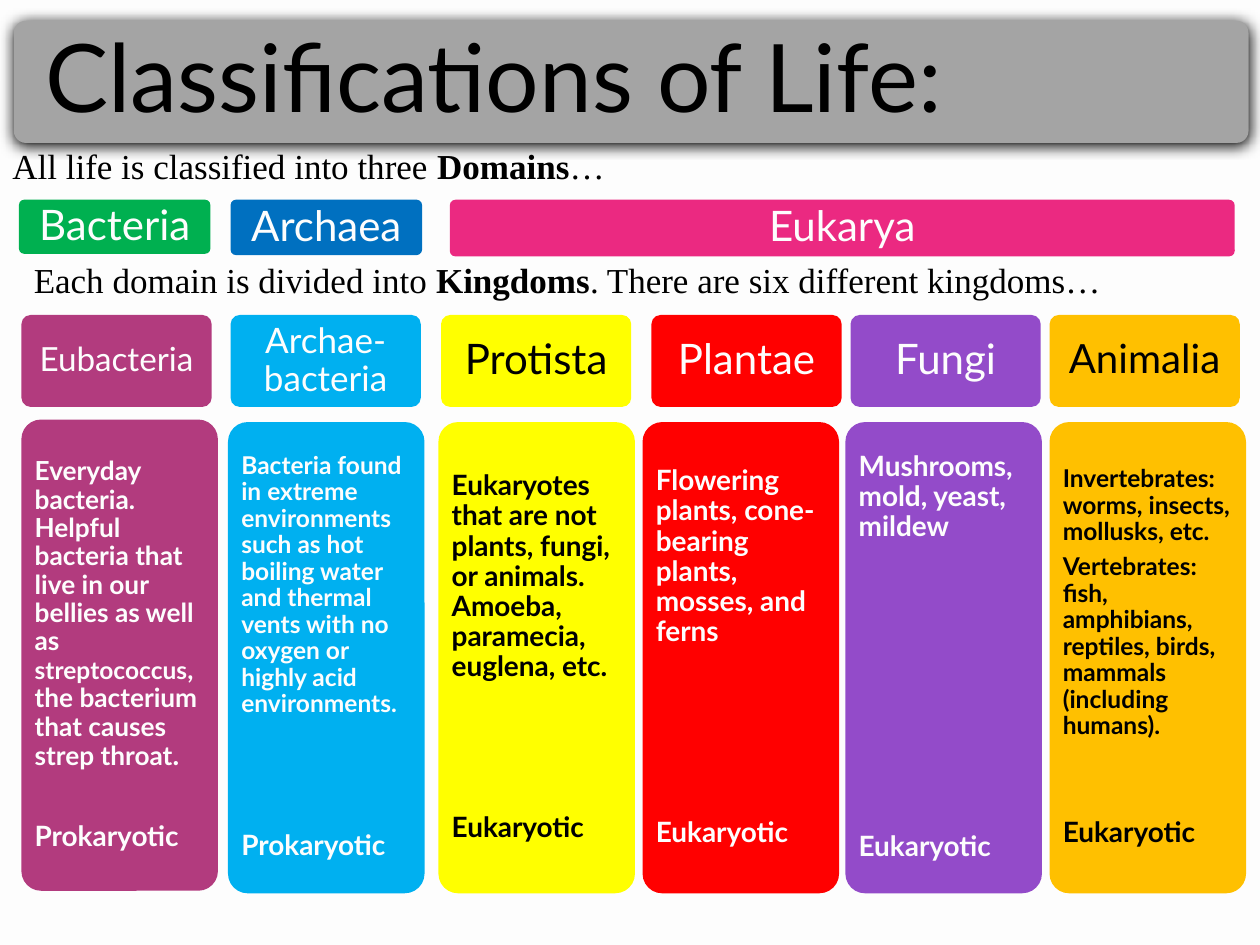
from collections import namedtuple

from lxml import etree
from pptx import Presentation
from pptx.dml.color import RGBColor
from pptx.enum.shapes import MSO_SHAPE
from pptx.enum.text import MSO_ANCHOR, MSO_AUTO_SIZE, PP_ALIGN
from pptx.oxml.ns import qn
from pptx.util import Inches, Pt

ROUNDED = MSO_SHAPE.ROUNDED_RECTANGLE
MIDDLE = MSO_ANCHOR.MIDDLE
NO_FIT = MSO_AUTO_SIZE.NONE
LEFT, CENTER = PP_ALIGN.LEFT, PP_ALIGN.CENTER

# Grid: 100 columns by 75 rows of square cells
COLUMNS, ROWS = 100, 75
CELL = Inches(0.1)
CORNER = 0.1  # corner radius as a share of the shorter side
LABEL_FONT, SENTENCE_FONT = "Lato", "Times New Roman"

COLORS = {
    "background": "FDFDFD", "banner": "A4A4A4", "light": "FDFDFD", "dark": "000000",
    "green": "00B050", "blue": "0070C0", "pink": "EB2981", "plum": "B23B7E",
    "sky": "00B0F0", "yellow": "FFFF00", "red": "FF0000", "purple": "934BC9",
    "amber": "FFC000",
}

Box = namedtuple("Box", "left top width height")
Domain = namedtuple("Domain", "name color box")
# paragraphs: lists of (text, size) runs; gap: points above the cell type
Kingdom = namedtuple(
    "Kingdom", "name size color ink label_left card_left card_top paragraphs cell_type gap")

DOMAINS = [
    Domain("Bacteria", "green", Box(1.5, 15.85, 15.2, 4.3)),
    Domain("Archaea", "blue", Box(18.3, 15.85, 15.2, 4.4)),
    Domain("Eukarya", "pink", Box(35.7, 15.85, 62.3, 4.5)),
]

KINGDOMS = [
    Kingdom("Eubacteria", 19, "plum", "light", 1.7, 1.7, 33.3, [[
        ("Everyday bacteria. Helpful bacteria that live in our bellies as well as ", 15),
        ("streptococcus", 14),
        (", the bacterium that causes strep throat", 15),
        (".", 16)]], "Prokaryotic", 23),
    Kingdom("Archae-bacteria", 20, "sky", "light", 18.3, 18.1, 33.5, [[
        ("Bacteria found in extreme environments such as hot boiling water and "
         "thermal vents with no oxygen or highly acid environments.", 14)]],
        "Prokaryotic", 60),
    Kingdom("Protista", 24, "yellow", "dark", 35, 34.8, 33.5, [[
        ("Eukaryotes that are not plants, fungi, or animals. Amoeba, paramecia, "
         "euglena, etc.", 16)]], "Eukaryotic", 69),
    Kingdom("Plantae", 24, "red", "light", 51.7, 51, 33.5, [[
        ("Flowering plants, cone-bearing plants, mosses, and ferns", 16)]],
        "Eukaryotic", 92),
    Kingdom("Fungi", 24, "purple", "light", 67.5, 67.1, 33.5, [[
        ("Mushrooms, mold, yeast, mildew", 16)]], "Eukaryotic", 160),
    Kingdom("Animalia", 23, "amber", "dark", 83.3, 83.3, 33.5, [
        [("Invertebrates: worms, insects, mollusks, etc.", 14)],
        [("Vertebrates: fish, amphibians, reptiles, birds, mammals "
          "(including humans).", 14)]], "Eukaryotic", 40),
]


def rgb(name):
    return RGBColor.from_string(COLORS[name])


def place(box):
    return [round(CELL * length) for length in box]


def prepare_frame(frame, inset):
    frame.word_wrap = True
    frame.auto_size = NO_FIT
    frame.vertical_anchor = MIDDLE
    frame.margin_left = frame.margin_right = Inches(inset)
    frame.margin_top = frame.margin_bottom = Inches(inset)


def write_label(paragraph, runs, ink, align, bold=False):
    """Writes (text, size) runs in the label font, with tight lines."""
    paragraph.alignment = align
    paragraph.line_spacing = 0.9
    paragraph.space_after = Pt(0.35 * runs[-1][1])
    font = paragraph.font
    font.name, font.bold = LABEL_FONT, bold
    font.color.rgb = rgb(ink)
    same_size = len({size for _, size in runs}) == 1
    if same_size:
        font.size = Pt(runs[0][1])
    for text, size in runs:
        run = paragraph.add_run()
        run.text = text
        if not same_size:
            run.font.size = Pt(size)


def add_panel(slide, box, color, inset):
    panel = slide.shapes.add_shape(ROUNDED, *place(box))
    panel.adjustments[0] = CORNER
    panel.shadow.inherit = False
    panel.fill.solid()
    panel.fill.fore_color.rgb = rgb(color)
    panel.line.fill.background()
    prepare_frame(panel.text_frame, inset)
    return panel


def add_label(slide, box, name, size, color, ink, inset):
    frame = add_panel(slide, box, color, inset).text_frame
    write_label(frame.paragraphs[0], [(name, size)], ink, CENTER)


def add_banner(slide, box, text):
    """Title placeholder in front of a rounded bar with a soft shadow."""
    bar = add_panel(slide, box, "banner", 0.25)
    shadow = etree.SubElement(
        bar._element.spPr.find(qn("a:effectLst")), qn("a:outerShdw"),
        blurRad=str(Pt(8.5)), dist=str(Pt(1)), dir="5400000", rotWithShape="0")
    etree.SubElement(shadow, qn("a:srgbClr"), val=COLORS["dark"])

    title = slide.shapes.title
    title.left, title.top, title.width, title.height = place(box)
    prepare_frame(title.text_frame, 0.25)
    write_label(title.text_frame.paragraphs[0], [(text, 54)], "dark", LEFT)
    bar._element.addnext(title._element)


def add_sentence(slide, box, before, keyword, after):
    frame = slide.shapes.add_textbox(*place(box)).text_frame
    frame.word_wrap = True
    paragraph = frame.paragraphs[0]
    font = paragraph.font
    font.name, font.size = SENTENCE_FONT, Pt(20)
    font.color.rgb = rgb("dark")
    for text in (before, keyword, after):
        run = paragraph.add_run()
        run.text = text
        run.font.bold = text == keyword


def add_kingdom(slide, kingdom):
    """A kingdom's name above the card that describes it."""
    add_label(slide, Box(kingdom.label_left, 25, 15.1, 7.3), kingdom.name,
              kingdom.size, kingdom.color, kingdom.ink, 0.1)
    card = add_panel(slide, Box(kingdom.card_left, kingdom.card_top, 15.6, 37.4),
                     kingdom.color, 0.06).text_frame
    paragraphs = kingdom.paragraphs + [[(kingdom.cell_type, 16)]]
    for index, runs in enumerate(paragraphs):
        paragraph = card.add_paragraph() if index else card.paragraphs[0]
        write_label(paragraph, runs, kingdom.ink, LEFT, bold=True)
    paragraph.space_before = Pt(kingdom.gap)


def main():
    deck = Presentation()
    deck.slide_width, deck.slide_height = CELL * COLUMNS, CELL * ROWS
    slide = deck.slides.add_slide(deck.slide_layouts[5])
    slide.background.fill.solid()
    slide.background.fill.fore_color.rgb = rgb("background")

    add_banner(slide, Box(1.1, 1.65, 98, 9.7), "Classifications of Life:")

    # Domains
    add_sentence(slide, Box(0, 10.95, 90.8, 4.4),
                 "All life is classified into three ", "Domains", "…")
    for domain in DOMAINS:
        add_label(slide, domain.box, domain.name, 24, domain.color, "light", 0.12)

    # Kingdoms
    add_sentence(slide, Box(1.7, 20, 93.3, 4.4), "Each domain is divided into ",
                 "Kingdoms", ". There are six different kingdoms…")
    for kingdom in KINGDOMS:
        add_kingdom(slide, kingdom)

    deck.save("out.pptx")


if __name__ == "__main__":
    main()
